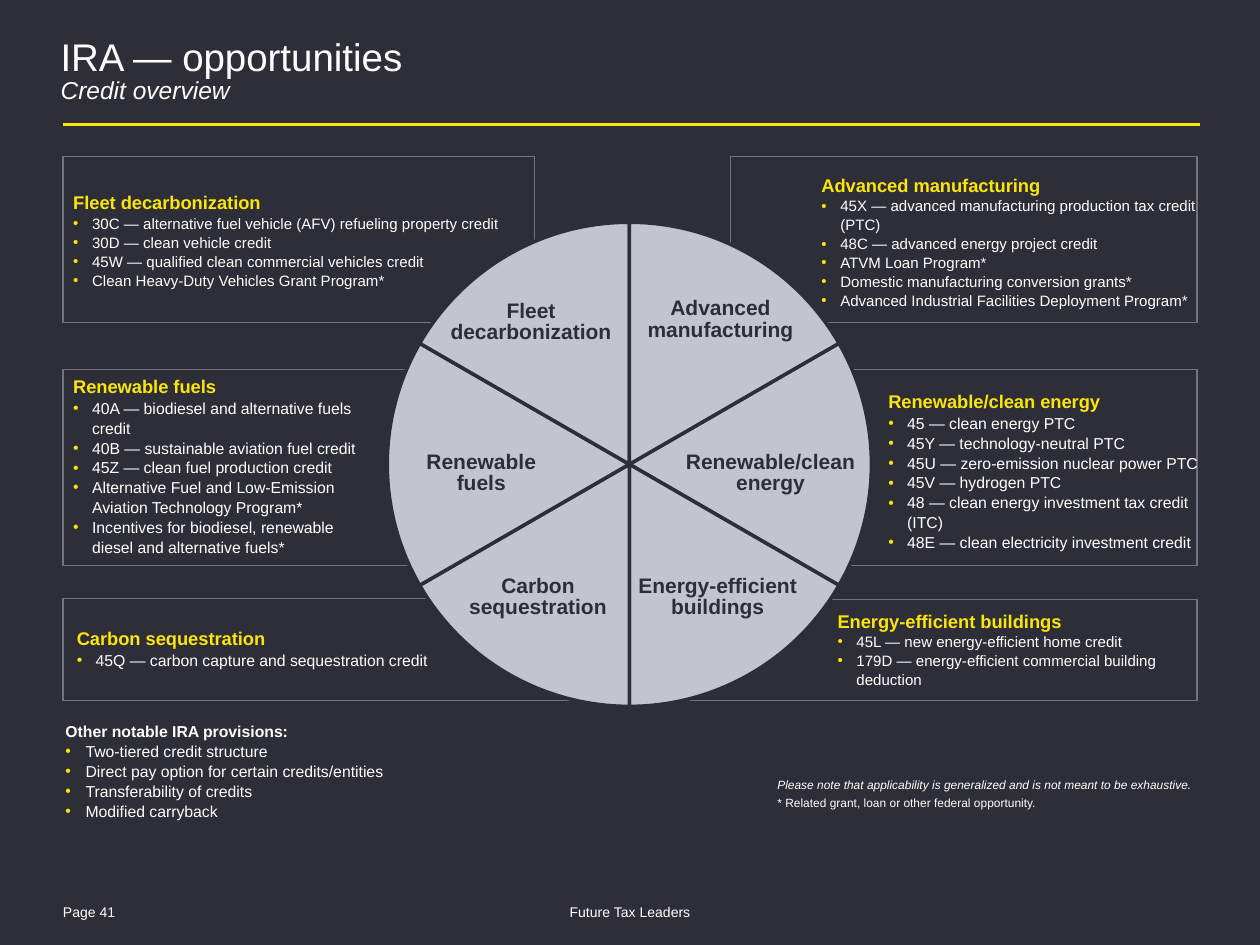
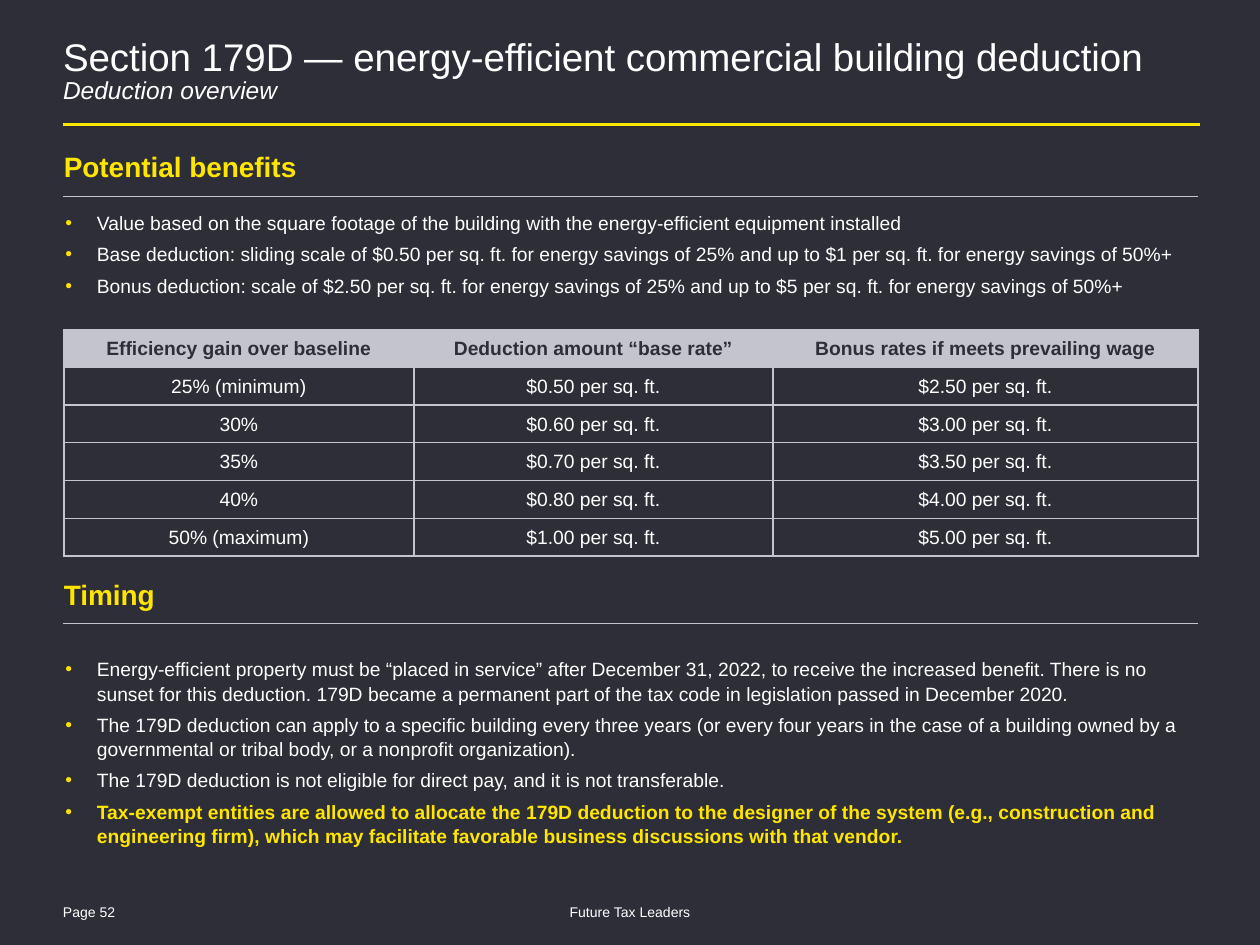
from lxml import etree
from pptx import Presentation
from pptx.chart.data import CategoryChartData
from pptx.dml.color import RGBColor
from pptx.enum.chart import XL_CHART_TYPE
from pptx.enum.shapes import MSO_CONNECTOR, MSO_SHAPE
from pptx.enum.text import MSO_ANCHOR, MSO_AUTO_SIZE, PP_ALIGN
from pptx.oxml.ns import qn
from pptx.util import Pt

PIE = XL_CHART_TYPE.PIE
RECT = MSO_SHAPE.RECTANGLE
LINE = MSO_CONNECTOR.STRAIGHT
TOP, MIDDLE = MSO_ANCHOR.TOP, MSO_ANCHOR.MIDDLE
LEFT, CENTER = PP_ALIGN.LEFT, PP_ALIGN.CENTER
FIXED = MSO_AUTO_SIZE.NONE

FONT = "Arial"
DARK, WHITE, YELLOW = "2E2E38", "FFFFFF", "FFE600"
SILVER, GRAY = "C4C4CD", "747480"
EDGE, WIDE = 36, 648

BOXES = [
    (36, 89.3, 269.3, 95),
    (417.6, 89.3, 266.4, 95),
    (36, 211, 205, 112.3),
    (384.5, 211, 299.5, 112.3),
    (36, 342, 293.8, 58.3),
    (393.8, 342.7, 290.2, 57.6),
]

CREDITS = [
    ("Fleet decarbonization", (41.8, 109.4, 253.4, 55), 8.6, [
        "30C — alternative fuel vehicle (AFV) refueling property credit",
        "30D — clean vehicle credit",
        "45W — qualified clean commercial vehicles credit",
        "Clean Heavy-Duty Vehicles Grant Program*"]),
    ("Advanced manufacturing", (469.4, 99.4, 216, 75.6), 8.6, [
        "45X — advanced manufacturing production tax credit (PTC)",
        "48C — advanced energy project credit",
        "ATVM Loan Program*",
        "Domestic manufacturing conversion grants*",
        "Advanced Industrial Facilities Deployment Program*"]),
    ("Renewable fuels", (41.8, 214.6, 165, 100), 9, [
        "40A — biodiesel and alternative fuels credit",
        "40B — sustainable aviation fuel credit",
        "45Z — clean fuel production credit",
        "Alternative Fuel and Low-Emission Aviation Technology Program*",
        "Incentives for biodiesel, renewable diesel and alternative fuels*"]),
    ("Renewable/clean energy", (507.6, 223.2, 178, 89.3), 9, [
        "45 — clean energy PTC",
        "45Y — technology-neutral PTC",
        "45U — zero-emission nuclear power PTC",
        "45V — hydrogen PTC",
        "48 — clean energy investment tax credit (ITC)",
        "48E — clean electricity investment credit"]),
    ("Carbon sequestration", (43.9, 358.6, 203.8, 23.8), 9, [
        "45Q — carbon capture and sequestration credit"]),
    ("Energy-efficient buildings", (478.6, 348.5, 205.2, 44), 8.6, [
        "45L — new energy-efficient home credit",
        "179D — energy-efficient commercial building deduction"]),
]

LABELS = [
    ("Fleet decarbonization", 257, 169.2, 92.9),
    ("Advanced manufacturing", 370, 167.8, 83.5),
    ("Renewable fuels", 233.3, 255.6, 83.5),
    ("Renewable/clean energy", 384.5, 255.6, 111.6),
    ("Carbon sequestration", 265.7, 326.2, 83.5),
    ("Energy-efficient buildings", 362.2, 326.2, 95.8),
]

OTHER = [
    "Two-tiered credit structure",
    "Direct pay option for certain credits/entities",
    "Transferability of credits",
    "Modified carryback",
]

BENEFITS = [
    "Value based on the square footage of the building with the energy-efficient equipment installed",
    "Base deduction: sliding scale of $0.50 per sq. ft. for energy savings of 25% and up to $1 per sq. ft. "
    "for energy savings of 50%+",
    "Bonus deduction: scale of $2.50 per sq. ft. for energy savings of 25% and up to $5 per sq. ft. "
    "for energy savings of 50%+",
]

TIMING = [
    "Energy-efficient property must be “placed in service” after December 31, 2022, to receive the increased "
    "benefit. There is no sunset for this deduction. 179D became a permanent part of the tax code in "
    "legislation passed in December 2020.",
    "The 179D deduction can apply to a specific building every three years (or every four years in the case "
    "of a building owned by a governmental or tribal body, or a nonprofit organization).",
    "The 179D deduction is not eligible for direct pay, and it is not transferable.",
]
VENDOR = (
    "Tax-exempt entities are allowed to allocate the 179D deduction to the designer of the system (e.g., "
    "construction and engineering firm), which may facilitate favorable business discussions with that vendor.")

RATES = [
    ("Efficiency gain over baseline", "Deduction amount “base rate”", "Bonus rates if meets prevailing wage"),
    ("25% (minimum)", "$0.50 per sq. ft.", "$2.50 per sq. ft."),
    ("30%", "$0.60 per sq. ft.", "$3.00 per sq. ft."),
    ("35%", "$0.70 per sq. ft.", "$3.50 per sq. ft."),
    ("40%", "$0.80 per sq. ft.", "$4.00 per sq. ft."),
    ("50% (maximum)", "$1.00 per sq. ft.", "$5.00 per sq. ft."),
]


def tint(code):
    return RGBColor.from_string(code)


def node(parent, tag, **attrs):
    return etree.SubElement(parent, qn(tag), **attrs)


def write(par, text, size, color=WHITE, bold=False, italic=False):
    run = par.add_run()
    run.text = text
    font = run.font
    font.name, font.size, font.bold, font.italic = FONT, Pt(size), bold, italic
    font.color.rgb = tint(color)


def say(frame, text, size=9, align=LEFT, lead=1, before=0, indent=0, **look):
    first = not frame.paragraphs[0].runs
    par = frame.paragraphs[0] if first else frame.add_paragraph()
    props = par._p.get_or_add_pPr()
    props.set("marL", str(Pt(indent)))
    props.set("indent", str(-Pt(indent)))
    if indent:
        node(node(props, "a:buClr"), "a:srgbClr", val=YELLOW)
        node(props, "a:buFont", typeface=FONT)
        node(props, "a:buChar", char="•")
    else:
        node(props, "a:buNone")
    par.alignment, par.line_spacing = align, lead
    par.space_before, par.space_after = Pt(0 if first else before), Pt(0)
    write(par, text, size, **look)
    return par


def place(shape, area, top=0, anchor=TOP):
    shape.left, shape.top, shape.width, shape.height = map(Pt, area)
    frame = shape.text_frame
    frame.auto_size, frame.word_wrap, frame.vertical_anchor = FIXED, True, anchor
    frame.margin_left = frame.margin_right = frame.margin_bottom = 0
    frame.margin_top = Pt(top)
    return frame


def box(slide, area, **pose):
    return place(slide.shapes.add_textbox(0, 0, 0, 0), area, **pose)


def bullets(frame, items, size, indent, before=0):
    for item in items:
        say(frame, item, size, lead=1.05, before=before, indent=indent)


def rule(slide, y, end, color, weight):
    line = slide.shapes.add_connector(LINE, Pt(EDGE), Pt(y), Pt(end), Pt(y))
    line.line.color.rgb = tint(color)
    line.line.width = Pt(weight)
    node(line._element.spPr, "a:effectLst")


def start(deck, layout, page, title, sub, left):
    slide = deck.slides.add_slide(deck.slide_layouts[layout])
    frame = place(slide.shapes.title, (left, 23, WIDE, 46.8))
    par = say(frame, title, 22, lead=0.85)
    node(node(par._p, "a:br"), "a:rPr", sz="2200")
    write(par, sub, 14, italic=True)
    say(box(slide, (EDGE, 513.4, 52.6, 14.4), top=2.9), page, 8)
    say(box(slide, (221.8, 513.4, 276.5, 14.4), top=2.9), "Future Tax Leaders", 8, CENTER)
    rule(slide, 71.3, 686, YELLOW, 1.5)
    return slide


def panel(slide, area):
    shape = slide.shapes.add_shape(RECT, *map(Pt, area))
    shape.shadow.inherit = False
    shape.fill.background()
    shape.line.color.rgb = tint(GRAY)
    shape.line.width = Pt(0.75)


def wheel(slide):
    data = CategoryChartData()
    data.categories = [str(n) for n in range(1, 7)]
    data.add_series("Series 1", [17] * 6)
    chart = slide.shapes.add_chart(PIE, Pt(162), Pt(114.5), Pt(395.3), Pt(298.8), data).chart
    chart.has_legend = chart.has_title = False
    chart.font.name, chart.font.size = FONT, Pt(10)
    chart.font.color.rgb = tint(DARK)
    plot = chart.plots[0]
    plot.vary_by_categories = False
    for n in range(6):
        part = plot.series[0].points[n].format
        part.fill.solid()
        part.fill.fore_color.rgb = tint(SILVER)
        part.line.color.rgb = tint(DARK)
        part.line.width = Pt(2)
    pie = plot._element
    for old in pie.findall(qn("c:firstSliceAng")):
        pie.remove(old)
    node(pie, "c:firstSliceAng", val="60")
    area = pie.getparent()
    for old in area.findall(qn("c:layout")):
        area.remove(old)
    layout = etree.Element(qn("c:layout"))
    area.insert(0, layout)
    manual = node(layout, "c:manualLayout")
    for key, val in [("layoutTarget", "inner"), ("xMode", "edge"), ("yMode", "edge"),
                     ("x", "0.15"), ("y", "0.04"), ("w", "0.7"), ("h", "0.93")]:
        node(manual, "c:" + key, val=val)


def border(cell):
    props = cell._tc.get_or_add_tcPr()
    for n, side in enumerate(("a:lnL", "a:lnR", "a:lnT", "a:lnB")):
        line = etree.Element(qn(side), w=str(Pt(1)))
        node(node(line, "a:solidFill"), "a:srgbClr", val=SILVER)
        props.insert(n, line)


def grid(slide, rows, widths, left, top, high):
    table = slide.shapes.add_table(
        len(rows), len(widths), Pt(left), Pt(top), Pt(sum(widths)), Pt(high * len(rows))).table
    for col, width in zip(table.columns, widths):
        col.width = Pt(width)
    for r, row in enumerate(rows):
        table.rows[r].height = Pt(high)
        head = r == 0
        for c, text in enumerate(row):
            cell = table.cell(r, c)
            cell.margin_left = cell.margin_right = cell.margin_top = Pt(0.72)
            cell.margin_bottom = 0
            cell.vertical_anchor = MIDDLE
            cell.fill.solid()
            cell.fill.fore_color.rgb = tint(SILVER if head else DARK)
            say(cell.text_frame, text, 11, CENTER, color=DARK if head else WHITE, bold=head)
            border(cell)


def section(slide, text, top):
    say(box(slide, (EDGE + 0.5, top, WIDE, 23)), text, 16, color=YELLOW, bold=True)
    rule(slide, top + 26.6, 684.7, SILVER, 0.75)


def credits(deck):
    slide = start(deck, 1, "Page 41", "IRA — opportunities", "Credit overview", 34.6)
    for area in BOXES:
        panel(slide, area)
    wheel(slide)
    for head, area, size, items in CREDITS:
        frame = box(slide, area)
        say(frame, head, 10.5, color=YELLOW, bold=True)
        bullets(frame, items, size, 10.8)
    for text, left, top, width in LABELS:
        say(box(slide, (left, top, width, 46), top=2.9), text, 12, CENTER, 0.85, color=DARK, bold=True)
    frame = place(slide.placeholders[1], (37.4, 412.6, 210.2, 67))
    say(frame, "Other notable IRA provisions:", bold=True)
    bullets(frame, OTHER, 9, 11.5)
    note = "Please note that applicability is generalized and is not meant to be exhaustive."
    say(box(slide, (444.2, 443.5, 248.4, 9.4), top=2.2), note, 6.8, lead=0.85, italic=True)
    say(box(slide, (444.2, 452.9, 248.4, 11.5), anchor=MIDDLE),
        "* Related grant, loan or other federal opportunity.", 6.8)


def deduction(deck):
    slide = start(deck, 3, "Page 52", "Section 179D — energy-efficient commercial building deduction",
                  "Deduction overview", EDGE)
    section(slide, "Potential benefits", 85.7)
    bullets(place(slide.placeholders[1], (37.4, 120.2, 682, 52)), BENEFITS, 11, 18, 4)
    grid(slide, RATES, (200, 205.2, 242.8), 36.5, 188.2, 21.6)
    section(slide, "Timing", 329.8)
    frame = place(slide.placeholders[2], (37.4, 375.1, 640, 110))
    bullets(frame, TIMING, 11, 18, 4)
    say(frame, VENDOR, 11, lead=1.05, before=4, indent=18, color=YELLOW, bold=True)


def main():
    deck = Presentation()
    deck.slide_width, deck.slide_height = Pt(720), Pt(540)
    back = deck.slide_master.background.fill
    back.solid()
    back.fore_color.rgb = tint(DARK)
    credits(deck)
    deduction(deck)
    deck.save("out.pptx")


if __name__ == "__main__":
    main()
